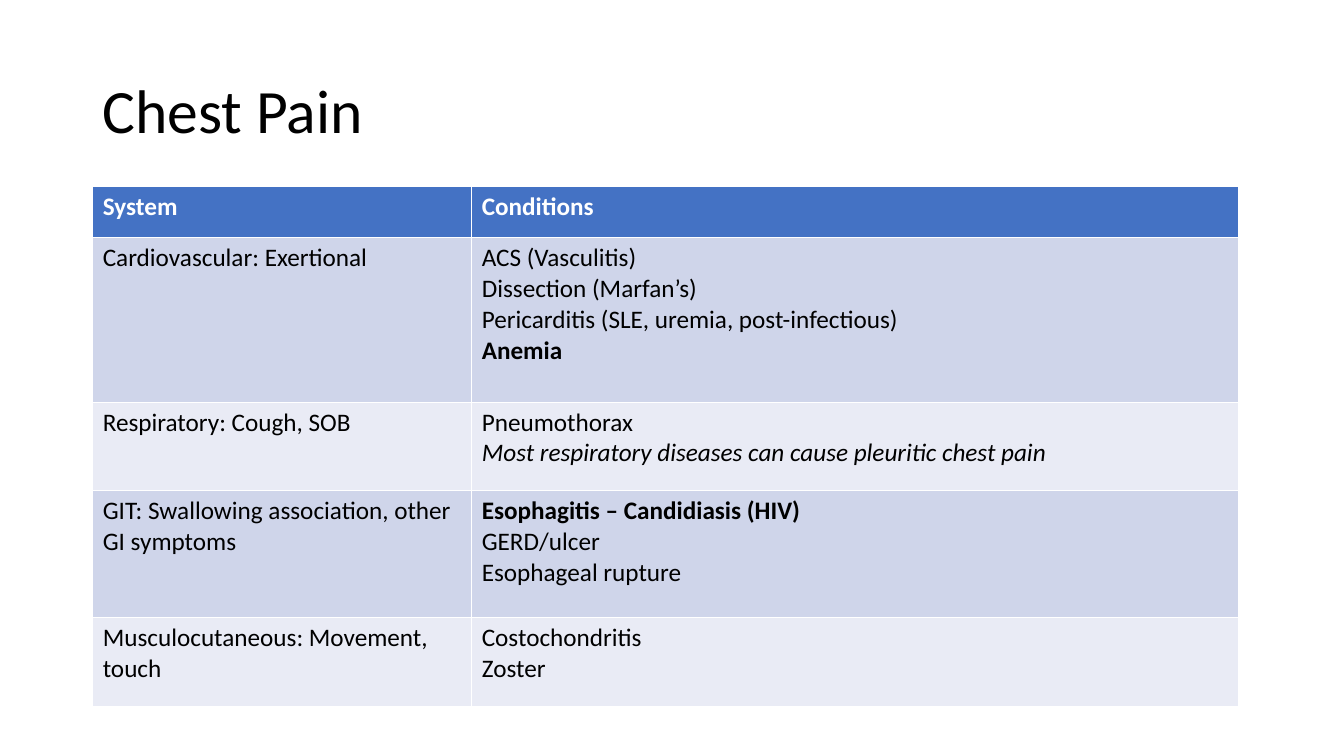
from pptx import Presentation
from pptx.dml.color import RGBColor
from pptx.enum import text
from pptx.util import Pt


def set_font(paragraph, size, color, bold=False, italic=False):
    font = paragraph.font
    font.name, font.size = "Calibri", Pt(size)
    font.bold, font.italic = bold, italic
    font.color.rgb = RGBColor.from_string(color)


HEADER_FILL = "4472C4"
BAND_FILLS = ["E9EBF5", "CFD5EA"]
BOLD_LINES = {"System", "Conditions", "Anemia", "Esophagitis – Candidiasis (HIV)"}
ITALIC_LINES = {"Most respiratory diseases can cause pleuritic chest pain"}

# Row height, system, conditions
ROWS = [
    (36.72, "System", ["Conditions"]),
    (117.36, "Cardiovascular: Exertional", [
        "ACS (Vasculitis)",
        "Dissection (Marfan’s)",
        "Pericarditis (SLE, uremia, post-infectious)",
        "Anemia",
    ]),
    (63.36, "Respiratory: Cough, SOB", [
        "Pneumothorax",
        "Most respiratory diseases can cause pleuritic chest pain",
    ]),
    (90.72, "GIT: Swallowing association, other GI symptoms", [
        "Esophagitis – Candidiasis (HIV)",
        "GERD/ulcer",
        "Esophageal rupture",
    ]),
    (63.36, "Musculocutaneous: Movement, touch", ["Costochondritis", "Zoster"]),
]
COLUMN_WIDTHS = [270.72, 547.92]
LEFT = 66.24

presentation = Presentation()
presentation.slide_width, presentation.slide_height = Pt(960), Pt(540)
slide = presentation.slides.add_slide(presentation.slide_layouts[6])

title = slide.shapes.add_textbox(Pt(LEFT), Pt(28.8), Pt(828), Pt(104.4))
title.text_frame.word_wrap = True
title.text_frame.vertical_anchor = text.MSO_ANCHOR.MIDDLE
title_paragraph = title.text_frame.paragraphs[0]
title_paragraph.text = "Chest Pain"
title_paragraph.line_spacing = 0.9
set_font(title_paragraph, 44, "000000")

# The default table style supplies the white borders
table = slide.shapes.add_table(
    len(ROWS), len(COLUMN_WIDTHS), Pt(LEFT), Pt(133.2),
    Pt(sum(COLUMN_WIDTHS)), Pt(sum(row[0] for row in ROWS)),
).table
for column, width in zip(table.columns, COLUMN_WIDTHS):
    column.width = Pt(width)

for row_index, (height, system, conditions) in enumerate(ROWS):
    table.rows[row_index].height = Pt(height)
    is_header = row_index == 0
    fill = HEADER_FILL if is_header else BAND_FILLS[row_index % 2]
    color = "FFFFFF" if is_header else "000000"
    for column_index, lines in enumerate([[system], conditions]):
        cell = table.cell(row_index, column_index)
        cell.fill.solid()
        cell.fill.fore_color.rgb = RGBColor.from_string(fill)
        cell.text = "\n".join(lines)
        for paragraph in cell.text_frame.paragraphs:
            line = paragraph.text
            set_font(paragraph, 18, color, line in BOLD_LINES, line in ITALIC_LINES)

presentation.save("out.pptx")
